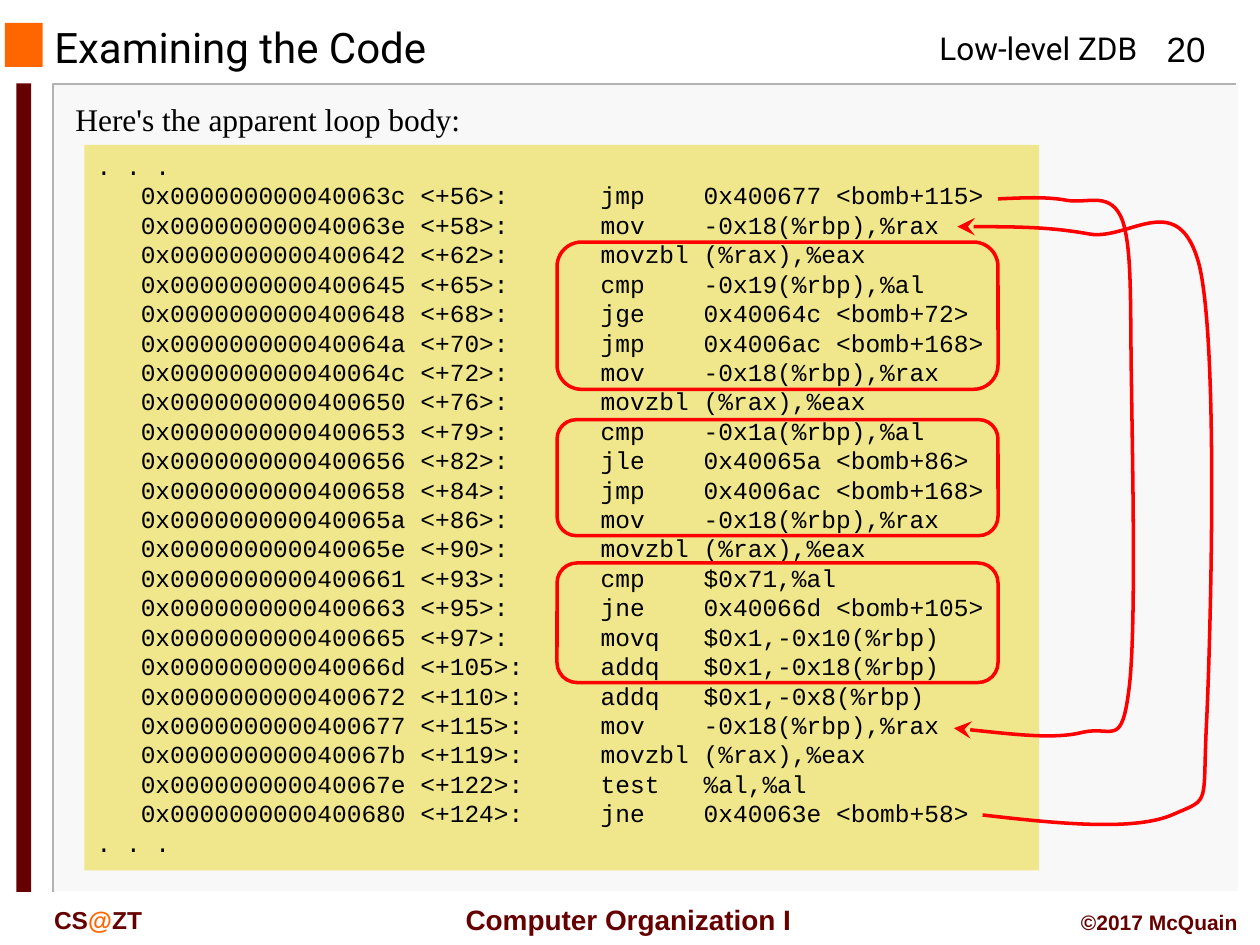
from lxml import etree
from pptx import Presentation
from pptx.dml.color import RGBColor
from pptx.enum.shapes import MSO_SHAPE
from pptx.enum.text import MSO_ANCHOR, PP_ALIGN
from pptx.oxml.ns import qn
from pptx.util import Cm, Pt

RECT, ROUND = MSO_SHAPE.RECTANGLE, MSO_SHAPE.ROUNDED_RECTANGLE
LEFT, MID, RIGHT = PP_ALIGN.LEFT, PP_ALIGN.CENTER, PP_ALIGN.RIGHT
TOP, CENTER = MSO_ANCHOR.TOP, MSO_ANCHOR.MIDDLE

BLACK = RGBColor(0x00, 0x00, 0x00)
WHITE = RGBColor(0xFF, 0xFF, 0xFF)
PALE = RGBColor(0xF8, 0xF8, 0xF8)
GREY = RGBColor(0xB2, 0xB2, 0xB2)
ORANGE = RGBColor(0xFF, 0x66, 0x00)
MAROON = RGBColor(0x66, 0x00, 0x00)
KHAKI = RGBColor(0xF0, 0xE6, 0x8C)
RED = RGBColor(0xFF, 0x00, 0x00)

BASE = 0x400604  # address of the function's first instruction
CODE = [
    (56, "jmp", "0x400677 <bomb+115>"),
    (58, "mov", "-0x18(%rbp),%rax"),
    (62, "movzbl", "(%rax),%eax"),
    (65, "cmp", "-0x19(%rbp),%al"),
    (68, "jge", "0x40064c <bomb+72>"),
    (70, "jmp", "0x4006ac <bomb+168>"),
    (72, "mov", "-0x18(%rbp),%rax"),
    (76, "movzbl", "(%rax),%eax"),
    (79, "cmp", "-0x1a(%rbp),%al"),
    (82, "jle", "0x40065a <bomb+86>"),
    (84, "jmp", "0x4006ac <bomb+168>"),
    (86, "mov", "-0x18(%rbp),%rax"),
    (90, "movzbl", "(%rax),%eax"),
    (93, "cmp", "$0x71,%al"),
    (95, "jne", "0x40066d <bomb+105>"),
    (97, "movq", "$0x1,-0x10(%rbp)"),
    (105, "addq", "$0x1,-0x18(%rbp)"),
    (110, "addq", "$0x1,-0x8(%rbp)"),
    (115, "mov", "-0x18(%rbp),%rax"),
    (119, "movzbl", "(%rax),%eax"),
    (122, "test", "%al,%al"),
    (124, "jne", "0x40063e <bomb+58>"),
]

# Each jump: a start point, then three points for every Bézier segment
ENTRY = [
    (20.12, 4.01), (20.6, 3.99), (21.11, 3.96), (21.51, 4.04),
    (21.95, 4.11), (22.4, 3.84), (22.63, 4.45),
    (22.83, 5.05), (22.78, 6.15), (22.81, 7.72),
    (22.83, 9.3), (22.91, 12.73), (22.76, 13.89),
    (22.61, 15.09), (22.43, 14.63), (21.84, 14.76),
    (21.26, 14.91), (20.24, 14.78), (19.23, 14.68),
]
REPEAT = [
    (19.81, 16.43), (21.36, 16.61), (22.91, 16.76), (23.67, 16.41),
    (24.43, 16.08), (24.23, 16.28), (24.33, 14.43),
    (24.41, 12.6), (24.56, 6.99), (24.18, 5.36),
    (23.77, 3.76), (22.78, 4.85), (21.97, 4.72),
    (21.16, 4.57), (20.22, 4.57), (19.3, 4.57),
]


def add_block(slide, kind, box, fill=None, line=None):
    block = slide.shapes.add_shape(kind, *map(Cm, box))
    block.shadow.inherit = False
    if fill is None:
        block.fill.background()
    else:
        block.fill.solid()
        block.fill.fore_color.rgb = fill
    if line is None:
        block.line.fill.background()
    else:
        block.line.color.rgb = line
        block.line.width = Pt(2)
    return block


def add_path(slide, points, color, width):
    start, *rest = [(Cm(x), Cm(y)) for x, y in points]
    maker = slide.shapes.build_freeform(*start)
    maker.add_line_segments(rest, close=False)
    shape = maker.convert_to_shape()
    shape.shadow.inherit = False
    shape.fill.background()
    shape.line.color.rgb = color
    shape.line.width = Pt(width)
    return shape


def add_jump(slide, points):
    """Turn each three line segments into one Bézier, ending in an arrowhead."""
    shape = add_path(slide, points, RED, 2)
    route = shape.element.find(".//" + qn("a:path"))
    for i, step in enumerate(route.findall(qn("a:lnTo"))):
        if i % 3 == 0:
            curve = etree.SubElement(route, qn("a:cubicBezTo"))
        curve.append(step[0])
        route.remove(step)
    line = shape.element.find(".//" + qn("a:ln"))
    etree.SubElement(line, qn("a:tailEnd"), type="stealth", w="lg", len="lg")


def style(frame, font, size, color=BLACK, bold=False, align=LEFT, anchor=TOP):
    frame.vertical_anchor = anchor
    for para in frame.paragraphs:
        para.alignment = align
        for run in para.runs:
            run.font.name = font
            run.font.size = Pt(size)
            run.font.bold = bold
            run.font.color.rgb = color


def add_label(slide, box, text, font, size, **look):
    frame = slide.shapes.add_textbox(*map(Cm, box)).text_frame
    frame.word_wrap = True
    frame.text = text
    style(frame, font, size, **look)
    return frame


def set_title(slide, text):
    title = slide.shapes.title
    title.left, title.top, title.width, title.height = map(
        Cm, (0.84, 0.46, 16.08, 0.97))
    title.text_frame.text = text
    style(title.text_frame, "Roboto", 24, anchor=CENTER)


def add_frame(slide):
    add_block(slide, RECT, (1.09, 1.7, 23.88, 16.28), PALE)
    add_path(slide, [(24.92, 1.7), (1.07, 1.7), (1.07, 17.98)], GREY, 1)
    add_path(slide, [(24.97, 1.7), (24.97, 17.98), (1.12, 17.98)], WHITE, 1)
    add_block(slide, RECT, (0.1, 0.46, 0.76, 0.89), ORANGE)
    add_block(slide, RECT, (0.33, 1.68, 0.3, 16.3), MAROON)


def add_footer(slide):
    look = {"color": MAROON, "bold": True}
    add_label(slide, (8.92, 18.06, 7.5, 0.94), "Computer Organization I",
              "Arial", 16, align=MID, anchor=CENTER, **look)
    add_label(slide, (17.78, 18.21, 7.42, 0.76), "©2017 McQuain",
              "Arial", 12, align=RIGHT, **look)
    frame = add_label(slide, (0.84, 18.11, 3.81, 0.84), "CS",
                      "Arial", 14, **look)
    for part in ("@", "ZT"):
        frame.paragraphs[0].add_run().text = part
    style(frame, "Arial", 14, **look)
    frame.paragraphs[0].runs[1].font.color.rgb = ORANGE


def add_code(slide):
    block = add_block(slide, RECT, (1.7, 2.92, 19.25, 14.63), KHAKI)
    rows = [f"   0x{BASE + off:016x} <+{off}>:\t{op:<7}{args}"
            for off, op, args in CODE]
    frame = block.text_frame
    frame.text = "\n".join([". . .", *rows, ". . ."])
    style(frame, "Courier New", 14)
    for para in frame.paragraphs:
        props = para._p.get_or_add_pPr()
        tabs = etree.SubElement(props, qn("a:tabLst"))
        etree.SubElement(tabs, qn("a:tab"), pos=str(Cm(10.16)), algn="l")


def main():
    deck = Presentation()
    deck.slide_width, deck.slide_height = Cm(25.4), Cm(19.05)
    slide = deck.slides.add_slide(deck.slide_layouts[5])
    add_frame(slide)
    set_title(slide, "Examining the Code")
    add_label(slide, (18.69, 0.46, 4.8, 1.02), "Low-level ZDB", "Roboto", 18)
    add_label(slide, (23.06, 0.43, 1.7, 1.09), "20", "Arial", 20, align=MID)
    add_footer(slide)
    add_label(slide, (1.27, 1.9, 23.5, 1.02), "Here's the apparent loop body:",
              "Times New Roman", 18)
    add_code(slide)
    for jump in (ENTRY, REPEAT):
        add_jump(slide, jump)
    for top, high in ((4.88, 2.97), (8.46, 2.34), (11.35, 2.41)):
        add_block(slide, ROUND, (11.23, top, 8.89, high), line=RED)
    deck.save("out.pptx")


if __name__ == "__main__":
    main()
